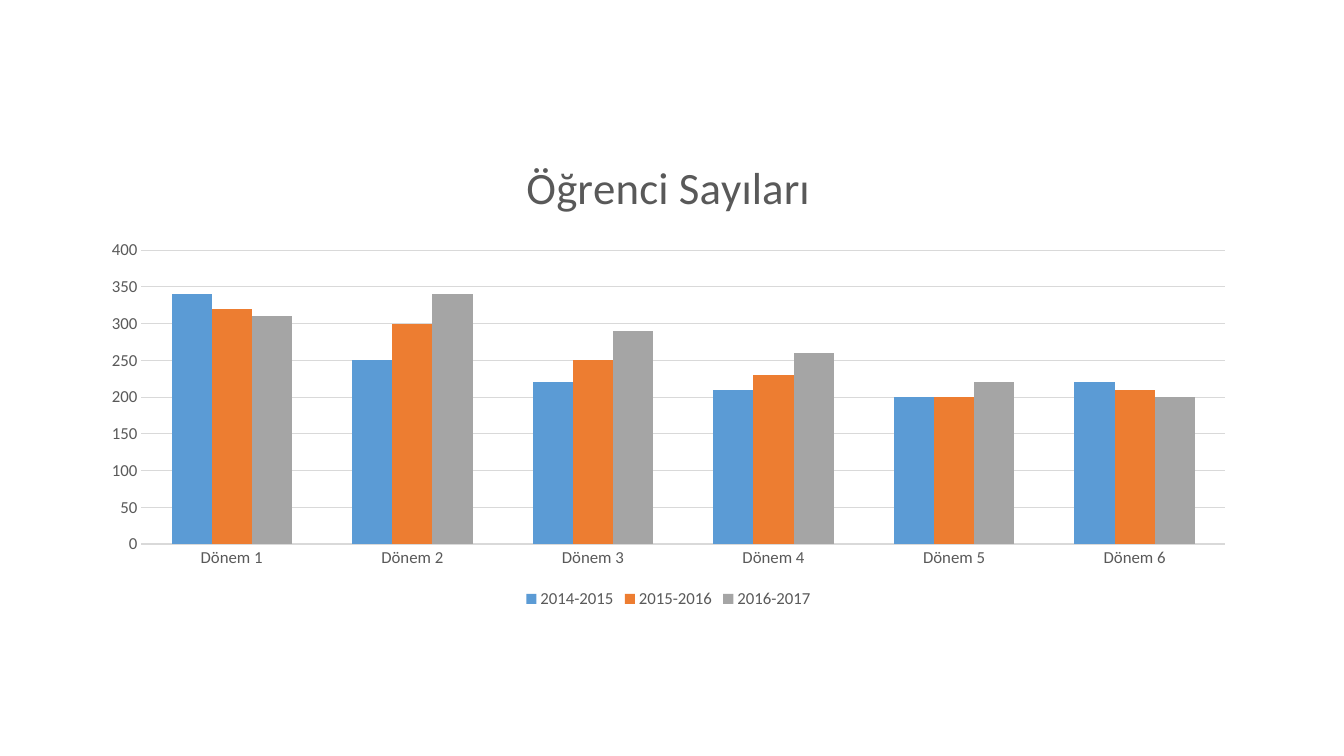
from pptx import Presentation
from pptx.chart.data import CategoryChartData
from pptx.dml.color import RGBColor
from pptx.enum.chart import XL_CHART_TYPE as ChartType
from pptx.enum.chart import XL_LEGEND_POSITION as LegendPosition
from pptx.enum.chart import XL_TICK_MARK as TickMark
from pptx.util import Inches, Pt

TITLE = "Öğrenci Sayıları"
TERMS = [f"Dönem {number}" for number in range(1, 7)]
BLUE = RGBColor(0x5B, 0x9B, 0xD5)
ORANGE = RGBColor(0xED, 0x7D, 0x31)
GRAY = RGBColor(0xA5, 0xA5, 0xA5)
TEXT = RGBColor(0x59, 0x59, 0x59)
GRID = RGBColor(0xD9, 0xD9, 0xD9)
STUDENTS = [
    ("2014-2015", BLUE, (340, 250, 220, 210, 200, 220)),
    ("2015-2016", ORANGE, (320, 300, 250, 230, 200, 210)),
    ("2016-2017", GRAY, (310, 340, 290, 260, 220, 200)),
]
FONT = "Calibri"
CHART_BOX = [Inches(length) for length in (0.88, 1.32, 11.5, 4.76)]


def format_font(font, size=12, color=TEXT):
    font.name = FONT
    font.size = Pt(size)
    font.bold = False
    font.color.rgb = color


def add_title(chart, text, **font_format):
    chart.has_title = True
    chart.chart_title.include_in_layout = False
    run = chart.chart_title.text_frame.paragraphs[0].add_run()
    run.text = text
    format_font(run.font, **font_format)


def format_axes(chart):
    for axis in (chart.category_axis, chart.value_axis):
        axis.major_tick_mark = axis.minor_tick_mark = TickMark.NONE
        axis.format.line.fill.background()
        format_font(axis.tick_labels.font)
    axis = chart.value_axis
    axis.minimum_scale, axis.maximum_scale, axis.major_unit = 0, 400, 50
    grid_line = axis.major_gridlines.format.line
    grid_line.color.rgb = GRID
    grid_line.width = Pt(0.75)


def add_student_chart(slide):
    data = CategoryChartData()
    data.categories = TERMS
    for year, _, counts in STUDENTS:
        data.add_series(year, counts)
    chart = slide.shapes.add_chart(ChartType.COLUMN_CLUSTERED, *CHART_BOX, data).chart
    format_font(chart.font)
    add_title(chart, TITLE, size=32)
    format_axes(chart)

    plot = chart.plots[0]
    plot.gap_width = 150
    plot.overlap = 0
    plot.vary_by_categories = False
    for series, (_, color, _) in zip(plot.series, STUDENTS):
        series.format.fill.solid()
        series.format.fill.fore_color.rgb = color
        series.invert_if_negative = False

    chart.has_legend = True
    chart.legend.position = LegendPosition.BOTTOM
    chart.legend.include_in_layout = False
    format_font(chart.legend.font)


def main():
    presentation = Presentation()
    presentation.slide_width = Inches(13.33)
    presentation.slide_height = Inches(7.5)
    blank_layout = presentation.slide_layouts[6]
    add_student_chart(presentation.slides.add_slide(blank_layout))
    presentation.save("out.pptx")


if __name__ == "__main__":
    main()
